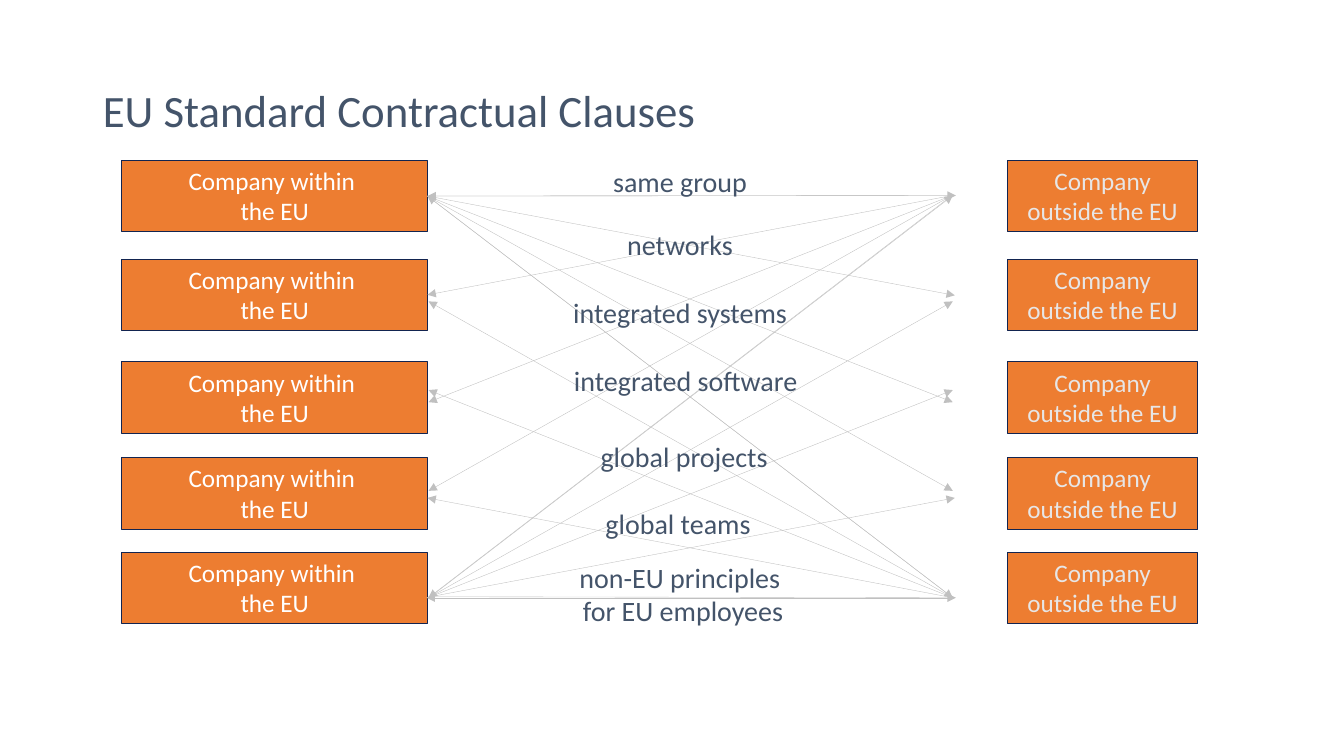
from dataclasses import dataclass

from lxml import etree
from pptx import Presentation
from pptx import util as u
from pptx.dml import color
from pptx.enum import shapes, text
from pptx.oxml import ns
from pptx.shapes import autoshape as auto
from pptx.slide import Slide
from pptx.text import text as body

SCALE = 9144
FONT = "Calibri"
COLORS = {
    "slate": "44546A",
    "orange": "ED7D31",
    "navy": "122450",
    "white": "FFFFFF",
    "pale": "E7E6E6",
    "gray": "C0C0C0",
}
ROWS = (159, 257, 359, 454, 548)
BOX_HIGH = 71
DOWN = (194, 293, 399, 487, 593)
UP = (593, 494, 387, 299, 194)
LEFT_TIPS = (423, 424, 425, 425, 425)
RIGHT_TIPS = (948, 947, 945, 945, 945)
REACH = 2


@dataclass(frozen=True)
class Side:
    left: int
    wide: int
    words: str
    ink: str
    wrap: bool


@dataclass(frozen=True)
class Fan:
    hub: tuple[int, int]
    tips: tuple[int, ...]
    rows: tuple[int, ...]


@dataclass(frozen=True)
class Label:
    left: int
    top: int
    wide: int
    words: str
    high: int = 44


INSIDE = Side(121, 303, "Company within \vthe EU", "white", True)
OUTSIDE = Side(999, 189, "Company\voutside the EU", "pale", False)
FANS = (
    Fan((427, 592), RIGHT_TIPS, UP),
    Fan((944, 194), LEFT_TIPS, DOWN),
    Fan((426, 194), RIGHT_TIPS, DOWN),
    Fan((945, 593), LEFT_TIPS, UP),
)
LABELS = (
    Label(589, 158, 171, "same group"),
    Label(607, 221, 135, "networks"),
    Label(544, 288, 261, "integrated systems"),
    Label(547, 356, 266, "integrated software"),
    Label(574, 431, 209, "global projects"),
    Label(580, 498, 185, "global teams"),
    Label(551, 551, 253, "non-EU principles \nfor EU employees", 77),
)


def px(count: int) -> u.Emu:
    return u.Emu(count * SCALE)


def tint(name: str) -> color.RGBColor:
    return color.RGBColor.from_string(COLORS[name])


def write(frame: body.TextFrame, words: str, size: int, ink: str, align: text.PP_ALIGN) -> None:
    frame.text = words
    for para in frame.paragraphs:
        para.alignment = align
        for run in para.runs:
            run.font.name = FONT
            run.font.size = u.Pt(size)
            run.font.color.rgb = tint(ink)


def fit(frame: body.TextFrame, wrap: bool) -> None:
    frame.word_wrap = wrap
    frame.auto_size = text.MSO_AUTO_SIZE.SHAPE_TO_FIT_TEXT
    frame.vertical_anchor = text.MSO_ANCHOR.TOP


def draw_title(slide: Slide, words: str) -> None:
    title = slide.shapes.title
    title.left, title.top, title.width, title.height = map(px, (92, 40, 1150, 145))
    frame = title.text_frame
    write(frame, words, 32, "slate", text.PP_ALIGN.LEFT)
    frame.vertical_anchor = text.MSO_ANCHOR.MIDDLE
    frame.paragraphs[0].line_spacing = 0.9


def draw_box(slide: Slide, side: Side, top: int) -> auto.Shape:
    box = slide.shapes.add_shape(
        shapes.MSO_SHAPE.RECTANGLE, px(side.left), px(top), px(side.wide), px(BOX_HIGH)
    )
    box.shadow.inherit = False
    box.fill.solid()
    box.fill.fore_color.rgb = tint("orange")
    box.line.color.rgb = tint("navy")
    box.line.width = u.Pt(0.75)
    write(box.text_frame, side.words, 18, side.ink, text.PP_ALIGN.CENTER)
    fit(box.text_frame, side.wrap)
    return box


def find_box(boxes: list[auto.Shape], x: int, y: int) -> auto.Shape | None:
    for box in boxes:
        across = abs(box.left + box.width - px(x))
        along = abs(box.top + box.height // 2 - px(y))
        if max(across, along) <= px(REACH):
            return box
    return None


def draw_fan(slide: Slide, fan: Fan, boxes: list[auto.Shape]) -> None:
    for tip in zip(fan.tips, fan.rows):
        line = slide.shapes.add_connector(
            shapes.MSO_CONNECTOR.STRAIGHT, *map(px, fan.hub + tip)
        )
        line.line.color.rgb = tint("gray")
        line.line.width = u.Pt(0.25)
        props = line._element.spPr
        etree.SubElement(props.find(ns.qn("a:ln")), ns.qn("a:tailEnd"), type="triangle")
        etree.SubElement(props, ns.qn("a:effectLst"))
        start, end = find_box(boxes, *fan.hub), find_box(boxes, *tip)
        if start is not None:
            line.begin_connect(start, 3)
        if end is not None:
            line.end_connect(end, 3)


def draw_label(slide: Slide, label: Label) -> None:
    box = slide.shapes.add_textbox(*map(px, (label.left, label.top, label.wide, label.high)))
    write(box.text_frame, label.words, 20, "slate", text.PP_ALIGN.CENTER)
    fit(box.text_frame, False)


def main() -> None:
    deck = Presentation()
    deck.slide_width, deck.slide_height = px(1333), px(750)
    slide = deck.slides.add_slide(deck.slide_layouts.get_by_name("Title Only"))
    draw_title(slide, "EU Standard Contractual Clauses")
    boxes = [draw_box(slide, side, top) for side in (INSIDE, OUTSIDE) for top in ROWS]
    for fan in FANS:
        draw_fan(slide, fan, boxes)
    for label in LABELS:
        draw_label(slide, label)
    deck.save("out.pptx")


if __name__ == "__main__":
    main()
